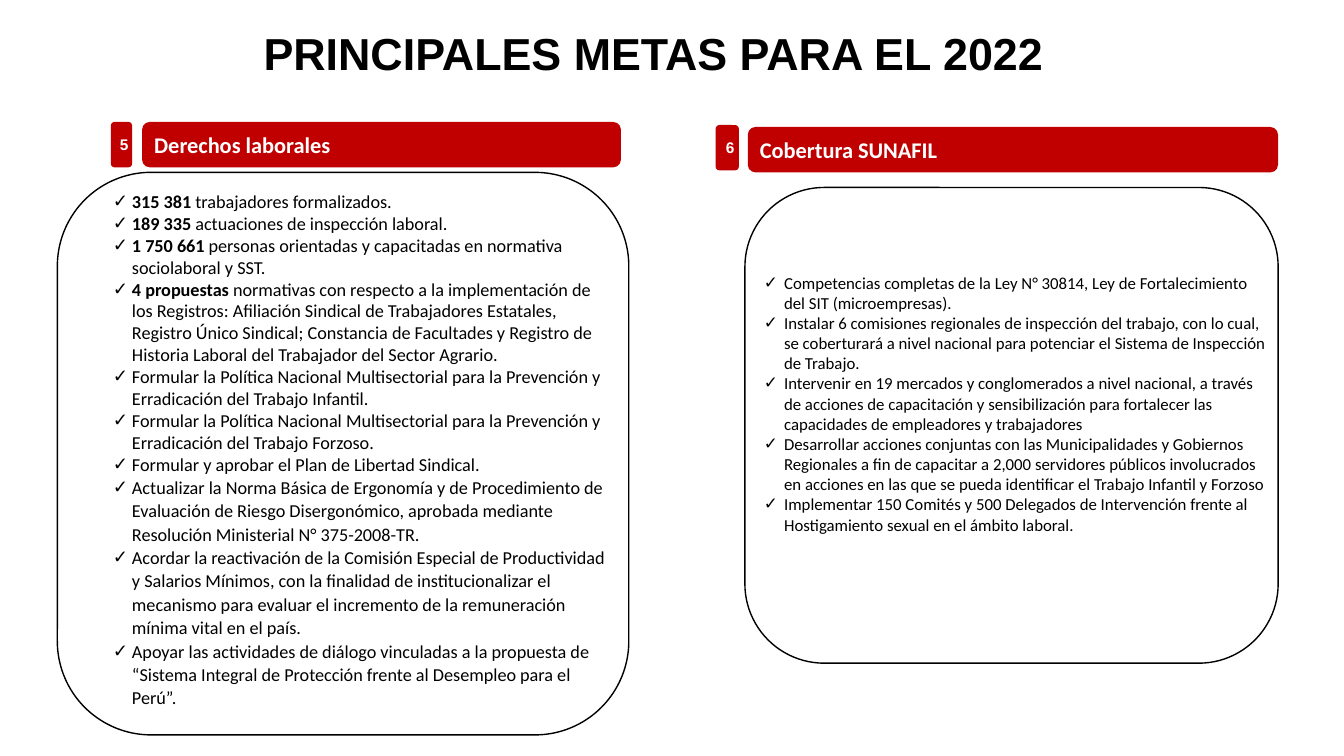
from pptx import Presentation
from pptx.dml.color import RGBColor
from pptx.enum.shapes import MSO_SHAPE
from pptx.enum.text import MSO_ANCHOR, MSO_AUTO_SIZE, PP_ALIGN
from pptx.oxml.ns import qn
from pptx.util import Pt
from lxml import etree

ROUNDED = MSO_SHAPE.ROUNDED_RECTANGLE
MIDDLE, TOP = MSO_ANCHOR.MIDDLE, MSO_ANCHOR.TOP
LEFT, CENTER = PP_ALIGN.LEFT, PP_ALIGN.CENTER
NO_FIT = MSO_AUTO_SIZE.NONE

COLORS = {"red": "C00000", "black": "000000", "white": "FFFFFF"}
TITLE = "PRINCIPALES METAS PARA EL 2022"

# Boxes are (left, top, width, height) in points.
# Each goal is (bold lead, text, line spacing).
PANELS = [
    {
        "number": "5", "heading": "Derechos laborales",
        "badge": (79.2, 87.1, 15.1, 32.4), "banner": (101.5, 87.1, 342, 32.4),
        "frame": (41, 123.1, 408.2, 401.8), "text": (45.4, 132.5, 393.8, 400),
        "size": 13, "indent": 41.8, "hanging": 13.7,
        "goals": [
            ("315 381 ", "trabajadores formalizados.", 1),
            ("189 335 ", "actuaciones de inspección laboral.", 1),
            ("1 750 661 ", "personas orientadas y capacitadas en normativa sociolaboral y SST.", 1),
            ("4 propuestas ", "normativas con respecto a la implementación de los Registros: "
             "Afiliación Sindical de Trabajadores Estatales, Registro Único Sindical; Constancia de "
             "Facultades y Registro de Historia Laboral del Trabajador del Sector Agrario.", 1),
            ("", "Formular la Política Nacional Multisectorial para la Prevención y "
             "Erradicación del Trabajo Infantil.", 1),
            ("", "Formular la Política Nacional Multisectorial para la Prevención y "
             "Erradicación del Trabajo Forzoso.", 1),
            ("", "Formular y aprobar el Plan de Libertad Sindical.", 1),
            ("", "Actualizar la Norma Básica de Ergonomía y de Procedimiento de Evaluación de "
             "Riesgo Disergonómico, aprobada mediante Resolución Ministerial N° 375-2008-TR.", 1.07),
            ("", "Acordar la reactivación de la Comisión Especial de Productividad y Salarios "
             "Mínimos, con la finalidad de institucionalizar el mecanismo para evaluar el "
             "incremento de la remuneración mínima vital en el país.", 1.07),
            ("", "Apoyar las actividades de diálogo vinculadas a la propuesta de “Sistema "
             "Integral de Protección frente al Desempleo para el Perú”.", 1.07),
        ],
    },
    {
        "number": "6", "heading": "Cobertura SUNAFIL",
        "badge": (511.2, 89.3, 16.6, 32.4), "banner": (534.2, 90.7, 378.7, 32.4),
        "frame": (532.1, 133.9, 380.9, 339.8), "text": (510.5, 191, 402.5, 225),
        "size": 12, "indent": 42.5, "hanging": 14.4,
        "goals": [
            ("", "Competencias completas de la Ley N° 30814, Ley de Fortalecimiento del SIT "
             "(microempresas).", 1),
            ("", "Instalar 6 comisiones regionales de inspección del trabajo, con lo cual, se "
             "coberturará a nivel nacional para potenciar el Sistema de Inspección de Trabajo.", 1),
            ("", "Intervenir en 19 mercados y conglomerados a nivel nacional, a través de acciones "
             "de capacitación y sensibilización para fortalecer las capacidades de empleadores y "
             "trabajadores", 1),
            ("", "Desarrollar acciones conjuntas con las Municipalidades y Gobiernos Regionales a "
             "fin de capacitar a 2,000 servidores públicos involucrados en acciones en las que se "
             "pueda identificar el Trabajo Infantil y Forzoso", 1),
            ("", "Implementar 150 Comités y 500 Delegados de Intervención frente al Hostigamiento "
             "sexual en el ámbito laboral.", 1),
        ],
    },
]


def rgb(name):
    return RGBColor.from_string(COLORS[name])


def points(box):
    return [Pt(v) for v in box]


def style(font, name, size, color, bold):
    font.name, font.size, font.bold = name, Pt(size), bold
    font.color.rgb = rgb(color)


def add_label(slide, box, text, font_name, size, align):
    sp = slide.shapes.add_shape(ROUNDED, *points(box))
    sp.shadow.inherit = False
    sp.fill.solid()
    sp.fill.fore_color.rgb = rgb("red")
    sp.line.fill.background()
    tf = sp.text_frame
    tf.text = text
    tf.vertical_anchor = MIDDLE
    p = tf.paragraphs[0]
    p.alignment = align
    style(p.runs[0].font, font_name, size, "white", True)
    return tf


def add_frame(slide, box):
    sp = slide.shapes.add_shape(ROUNDED, *points(box))
    sp.shadow.inherit = False
    sp.fill.background()
    sp.line.color.rgb = rgb("black")
    sp.line.width = Pt(1)


def add_check(p, indent, hanging):
    pPr = p._p.get_or_add_pPr()
    pPr.set("marL", str(Pt(indent)))
    pPr.set("indent", str(-Pt(hanging)))
    etree.SubElement(pPr, qn("a:buFont")).set("typeface", "Arial")
    etree.SubElement(pPr, qn("a:buChar")).set("char", "✓")


def add_goals(slide, panel):
    tf = slide.shapes.add_textbox(*points(panel["text"])).text_frame
    tf.word_wrap = True
    for i, (lead, text, spacing) in enumerate(panel["goals"]):
        p = tf.add_paragraph() if i else tf.paragraphs[0]
        add_check(p, panel["indent"], panel["hanging"])
        p.alignment = LEFT
        if spacing != 1:
            p.line_spacing = spacing
        for part, bold in ((lead, True), (text, False)):
            if part:
                r = p.add_run()
                r.text = part
                style(r.font, "Calibri", panel["size"], "black", bold)


def add_title(slide):
    sp = slide.shapes.title
    sp.left, sp.top, sp.width, sp.height = points((10.8, 14.4, 920.9, 46.1))
    tf = sp.text_frame
    tf.text = TITLE
    tf.word_wrap = True
    tf.auto_size = NO_FIT
    tf.vertical_anchor = TOP
    tf.margin_right = Pt(16)
    p = tf.paragraphs[0]
    p.alignment = CENTER
    style(p.runs[0].font, "Arial", 32, "black", True)


def main():
    prs = Presentation()
    prs.slide_width, prs.slide_height = Pt(960), Pt(540)
    s = prs.slides.add_slide(prs.slide_layouts[5])
    add_title(s)
    for panel in PANELS:
        add_label(s, panel["banner"], panel["heading"], "Calibri", 16, LEFT)
        badge = add_label(s, panel["badge"], panel["number"], "Arial", 11, CENTER)
        badge.margin_left, badge.margin_right = Pt(4), Pt(0)
        add_frame(s, panel["frame"])
        add_goals(s, panel)
    prs.save("out.pptx")


if __name__ == "__main__":
    main()
